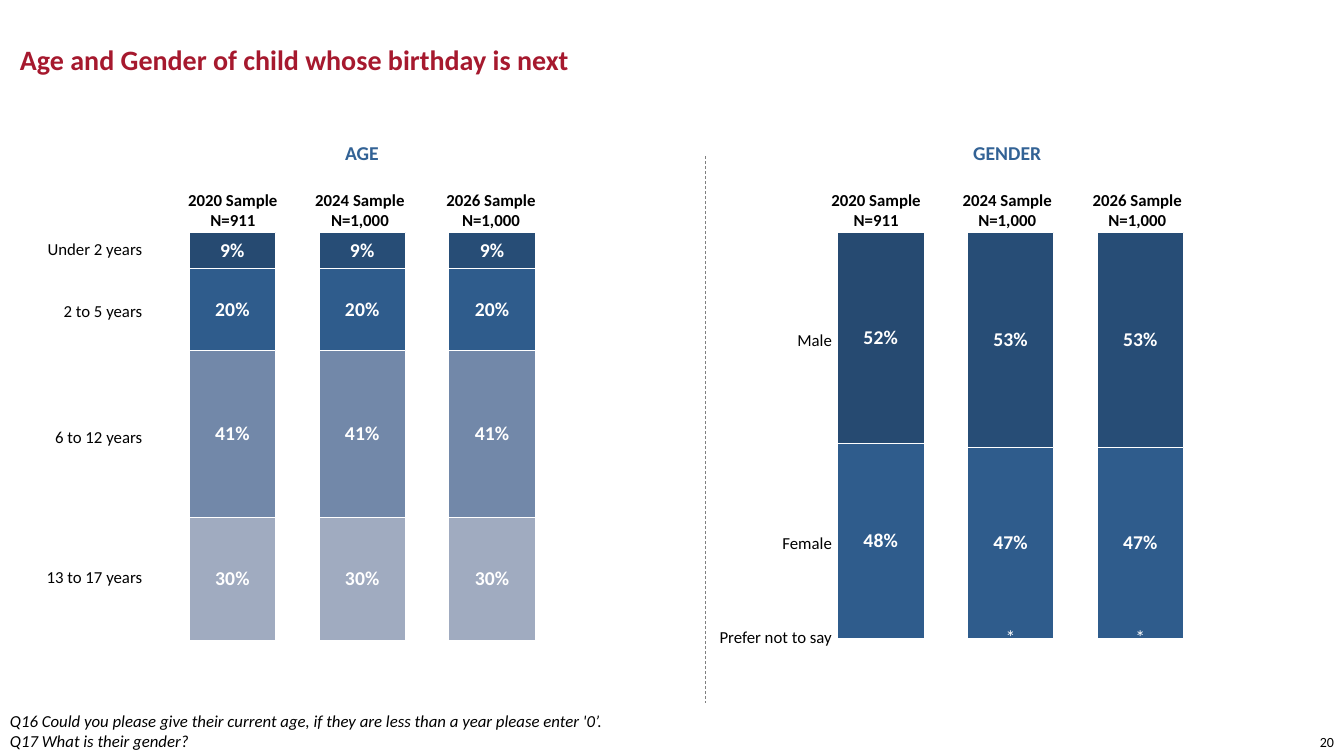
from lxml import etree
from pptx import Presentation
from pptx.chart.data import CategoryChartData
from pptx.dml.color import RGBColor
from pptx.enum.chart import XL_CHART_TYPE
from pptx.enum.dml import MSO_LINE
from pptx.enum.shapes import MSO_CONNECTOR
from pptx.enum.text import MSO_ANCHOR, PP_ALIGN
from pptx.oxml import parse_xml
from pptx.oxml.ns import nsdecls, qn
from pptx.util import Inches, Pt

FONT = "Calibri"
BLACK = RGBColor(0x00, 0x00, 0x00)
WHITE = RGBColor(0xFF, 0xFF, 0xFF)
GREY = RGBColor(0x80, 0x80, 0x80)
RED = RGBColor(0xA6, 0x19, 0x2E)
HEADING_BLUE = RGBColor(0x32, 0x62, 0x95)
FIRST_BAR = RGBColor(0x26, 0x4A, 0x71)
SERIES_COLORS = [
    RGBColor(0x27, 0x4D, 0x76),
    RGBColor(0x2F, 0x5C, 0x8C),
    RGBColor(0x72, 0x88, 0xA9),
    RGBColor(0xA0, 0xAB, 0xC0),
]

SAMPLES = [("2020", "N=911"), ("2024", "N=1,000"), ("2026", "N=1,000")]
# Each row: label, top of the label, share per sample
AGE_ROWS = [
    ("Under 2 years", 2.32, (0.09, 0.09, 0.09)),
    ("2 to 5 years", 2.93, (0.2, 0.2, 0.2)),
    ("6 to 12 years", 4.18, (0.41, 0.41, 0.41)),
    ("13 to 17 years", 5.57, (0.3, 0.3, 0.3)),
]
GENDER_ROWS = [
    ("Male", 3.22, (0.52, 0.53, 0.53)),
    ("Female", 5.24, (0.48, 0.47, 0.47)),
    ("Prefer not to say", 6.17, (None, 0, 0)),
]
CHART_TOP, CHART_WIDTH, CHART_HEIGHT = 2.18, 4.1, 4.27
PLOT = {"x": 0.03, "y": 0.029, "w": 0.942, "h": 0.948}


def style_font(font, size, color, bold=False, italic=False):
    font.name = FONT
    font.size = Pt(size)
    font.color.rgb = color
    font.bold = bold
    font.italic = italic


def add_text(page, text, left, top, width, height, size=12, color=BLACK, bold=False,
             italic=False, align=PP_ALIGN.LEFT, anchor=MSO_ANCHOR.TOP, wrap=True,
             line_spacing=None):
    """Add a text box with one paragraph per line of text."""
    box = page.shapes.add_textbox(Inches(left), Inches(top), Inches(width), Inches(height))
    frame = box.text_frame
    frame.word_wrap = wrap
    frame.vertical_anchor = anchor
    frame.text = text
    for para in frame.paragraphs:
        para.alignment = align
        para.line_spacing = line_spacing
        for span in para.runs:
            style_font(span.font, size, color, bold, italic)


def set_plot_area(chart):
    """Fix the inner plot area as fractions of the chart."""
    plot_area = chart._chartSpace.chart.plotArea
    for layout in plot_area.findall(qn("c:layout")):
        plot_area.remove(layout)
    sides = "".join(f'<c:{side}Mode val="edge"/>' for side in "xy")
    sizes = "".join(f'<c:{key} val="{value}"/>' for key, value in PLOT.items())
    plot_area.insert(0, parse_xml(
        f'<c:layout {nsdecls("c")}><c:manualLayout><c:layoutTarget val="inner"/>'
        f"{sides}{sizes}</c:manualLayout></c:layout>"))


def style_series(series, color):
    series.format.fill.solid()
    series.format.fill.fore_color.rgb = color
    series.format.line.color.rgb = WHITE
    series.format.line.width = Pt(0.75)
    labels = series.data_labels
    labels.show_value = True
    labels.number_format = "0%"
    labels.number_format_is_linked = False
    style_font(labels.font, 14, WHITE, bold=True)
    for index, value in enumerate(series.values):
        if value == 0:
            frame = series.points[index].data_label.text_frame
            frame.text = "*"
            style_font(frame.paragraphs[0].runs[0].font, 14, WHITE)


def add_stacked_chart(page, rows, left):
    data = CategoryChartData(number_format="0%")
    data.categories = [f"{year} Sample" for year, _ in SAMPLES]
    for label, _, shares in rows:
        data.add_series(label, shares)
    chart = page.shapes.add_chart(
        XL_CHART_TYPE.COLUMN_STACKED_100, Inches(left), Inches(CHART_TOP),
        Inches(CHART_WIDTH), Inches(CHART_HEIGHT), data).chart
    chart.has_legend = False
    chart.has_title = False
    style_font(chart.font, 14, WHITE, bold=True)
    chart.category_axis.visible = False
    axis = chart.value_axis
    axis.visible = False
    axis.has_major_gridlines = False
    axis.reverse_order = True
    axis.minimum_scale, axis.maximum_scale = 0, 1
    plot = chart.plots[0]
    plot.gap_width, plot.overlap = 50, 100
    plot.vary_by_categories = False
    for series, color in zip(plot.series, SERIES_COLORS):
        style_series(series, color)
    first_point = plot.series[0].points[0].format
    first_point.fill.solid()
    first_point.fill.fore_color.rgb = FIRST_BAR
    first_point.line.color.rgb = WHITE
    first_point.line.width = Pt(0.75)
    set_plot_area(chart)


def add_panel(page, heading, rows, left, heading_center, header_lefts, label_right):
    """Place a heading, sample headers, row labels and chart; left is the chart's edge."""
    add_text(page, heading, heading_center - 0.5, 1.35, 1, 0.34, size=14,
             color=HEADING_BLUE, bold=True, align=PP_ALIGN.CENTER, wrap=False)
    add_stacked_chart(page, rows, left)
    for (year, count), header_left in zip(SAMPLES, header_lefts):
        add_text(page, f"{year} Sample\n{count}", header_left, 1.83, 1.14, 0.5,
                 bold=True, align=PP_ALIGN.CENTER, wrap=False)
    for label, top, _ in rows:
        add_text(page, label, label_right - 1.46, top, 1.46, 0.3, align=PP_ALIGN.RIGHT)


def add_divider(page, left, top, bottom):
    divider = page.shapes.add_connector(
        MSO_CONNECTOR.STRAIGHT, Inches(left), Inches(top), Inches(left), Inches(bottom))
    divider.line.color.rgb = GREY
    divider.line.width = Pt(0.5)
    divider.line.dash_style = MSO_LINE.DASH
    etree.SubElement(divider._element.spPr, qn("a:effectLst"))


def add_footer(page):
    add_text(page, "Q16 Could you please give their current age, if they are less than a year "
             "please enter '0’.\nQ17 What is their gender?", 0, 7, 6.47, 0.5, italic=True)
    add_text(page, "20", 12.96, 7.23, 0.37, 0.27, size=10, align=PP_ALIGN.RIGHT,
             anchor=MSO_ANCHOR.MIDDLE, wrap=False)


def main():
    deck = Presentation()
    deck.slide_width, deck.slide_height = Inches(13.33), Inches(7.5)
    page = deck.slides.add_slide(deck.slide_layouts[6])
    add_text(page, "Age and Gender of child whose birthday is next", 0.1, 0.1, 11.5, 0.96,
             size=20, color=RED, bold=True, anchor=MSO_ANCHOR.MIDDLE, line_spacing=Pt(25))
    add_panel(page, "AGE", AGE_ROWS, left=1.54, heading_center=3.59,
              header_lefts=(1.74, 3, 4.3), label_right=1.51)
    add_divider(page, 7, 1.55, 6.97)
    add_panel(page, "GENDER", GENDER_ROWS, left=7.97, heading_center=9.99,
              header_lefts=(8.12, 9.42, 10.71), label_right=8.35)
    add_footer(page)
    deck.save("out.pptx")


if __name__ == "__main__":
    main()
